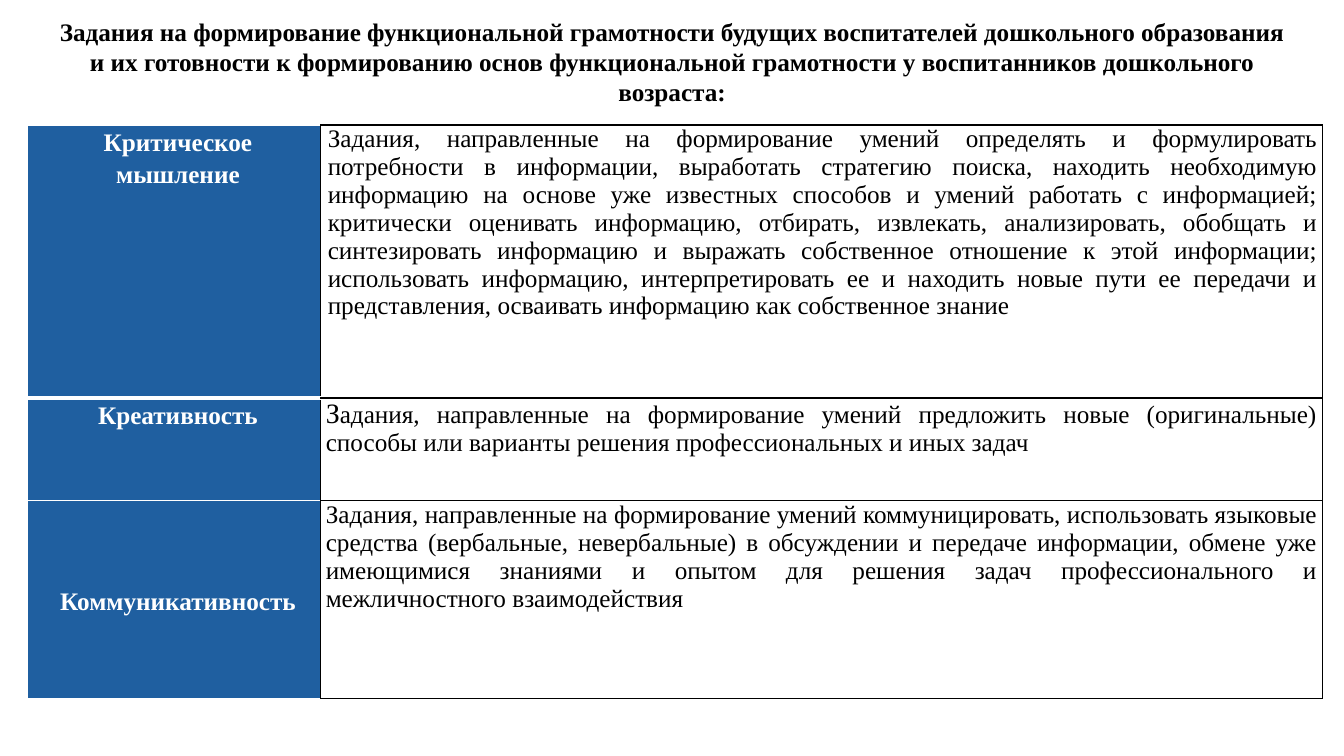
from lxml import etree
from pptx import Presentation
from pptx.dml.color import RGBColor
from pptx.enum.text import MSO_ANCHOR, MSO_AUTO_SIZE, PP_ALIGN
from pptx.oxml.ns import qn
from pptx.util import Cm, Pt

CENTER, JUSTIFY = PP_ALIGN.CENTER, PP_ALIGN.JUSTIFY
TOP, MIDDLE = MSO_ANCHOR.TOP, MSO_ANCHOR.MIDDLE
BLACK = RGBColor(0x00, 0x00, 0x00)
WHITE = RGBColor(0xFF, 0xFF, 0xFF)
BLUE = RGBColor(0x1F, 0x5F, 0xA0)
FONT = "Times New Roman"
SIZE = 18

TITLE = (
    "Задания на формирование функциональной грамотности будущих воспитателей "
    "дошкольного образования и их готовности к формированию основ функциональной "
    "грамотности у воспитанников дошкольного возраста:"
)

# skill, anchor, rule below (pt), row height (cm), task indent (cm), task runs
SKILLS = [
    ("Критическое мышление", TOP, 3, 6.88, 0.05, [
        ("Задания, направленные на формирование умений определять и формулировать "
         "потребности в информации, выработать стратегию поиска, находить необходимую "
         "информацию на основе уже известных способов и умений работать с информацией; "
         "критически оценивать информацию, отбирать, извлекать, анализировать, обобщать "
         "и синтезировать информацию и выражать собственное отношение к этой информации; "
         "использовать информацию, интерпретировать ее и находить новые пути ее передачи "
         "и представления, осваивать информацию как собственное знание", SIZE)]),
    ("Креативность", TOP, 1, 2.59, 0, [
        ("З", 20),
        ("адания, направленные на формирование умений предложить новые (оригинальные) "
         "способы или варианты решения профессиональных и иных задач", SIZE)]),
    ("Коммуникативность", MIDDLE, 1, 4.98, 0, [
        ("Задания, направленные на формирование умений коммуницировать, использовать "
         "языковые средства (вербальные, невербальные) в обсуждении и передаче "
         "информации, обмене уже имеющимися знаниями и опытом для решения задач "
         "профессионального и межличностного взаимодействия", SIZE)]),
]
COLUMNS = [7.39, 25.25]
TABLE_LEFT, TABLE_TOP = 0.69, 3.15


def add_run(p, text, size, color, bold):
    r = p.add_run()
    r.text = text
    r.font.name = FONT
    r.font.size = Pt(size)
    r.font.bold = bold
    r.font.color.rgb = color


def set_borders(cell, borders):
    """Put (side, colour, points) lines ahead of the cell's fill, in L, R, T, B order."""
    tc_pr = cell._tc.get_or_add_tcPr()
    for i, (side, color, points) in enumerate(borders):
        ln = etree.Element(qn(f"a:ln{side}"), w=str(Pt(points)))
        fill = etree.SubElement(ln, qn("a:solidFill"))
        etree.SubElement(fill, qn("a:srgbClr"), val=str(color))
        tc_pr.insert(i, ln)


def fill_cell(cell, runs, align, indent, fill, color, bold, borders):
    cell.margin_left = cell.margin_right = Cm(0.13)
    cell.margin_top = cell.margin_bottom = 0
    cell.fill.solid()
    cell.fill.fore_color.rgb = fill
    set_borders(cell, borders)
    p = cell.text_frame.paragraphs[0]
    p.alignment = align
    p._p.get_or_add_pPr().set("marL", str(Cm(indent)))
    for text, size in runs:
        add_run(p, text, size, color, bold)
    return p


prs = Presentation()
prs.slide_width, prs.slide_height = Cm(33.87), Cm(19.05)
slide = prs.slides.add_slide(prs.slide_layouts[6])

heights = [skill[3] for skill in SKILLS]
frame = slide.shapes.add_table(
    len(SKILLS), len(COLUMNS), Cm(TABLE_LEFT), Cm(TABLE_TOP),
    Cm(sum(COLUMNS)), Cm(sum(heights)))
table = frame.table
table.first_row = table.horz_banding = False
for column, width in zip(table.columns, COLUMNS):
    column.width = Cm(width)

above = 1
for i, (name, anchor, below, height, indent, task) in enumerate(SKILLS):
    table.rows[i].height = Cm(height)
    head, body = table.cell(i, 0), table.cell(i, 1)
    p = fill_cell(head, [(name, SIZE)], CENTER, 0.2, BLUE, WHITE, True, [
        ("L", WHITE, 1), ("R", BLACK, 1), ("T", WHITE, above), ("B", WHITE, below)])
    p.line_spacing = 1.15
    head.vertical_anchor = anchor
    fill_cell(body, task, JUSTIFY, indent, WHITE, BLACK, False,
              [(side, BLACK, 1) for side in "LRTB"])
    above = below

title = slide.shapes.add_textbox(Cm(1.19), Cm(0.28), Cm(31.5), Cm(2.57))
tf = title.text_frame
tf.word_wrap = True
tf.auto_size = MSO_AUTO_SIZE.SHAPE_TO_FIT_TEXT
p = tf.paragraphs[0]
p.alignment = CENTER
add_run(p, TITLE, SIZE, BLACK, True)

prs.save("out.pptx")
